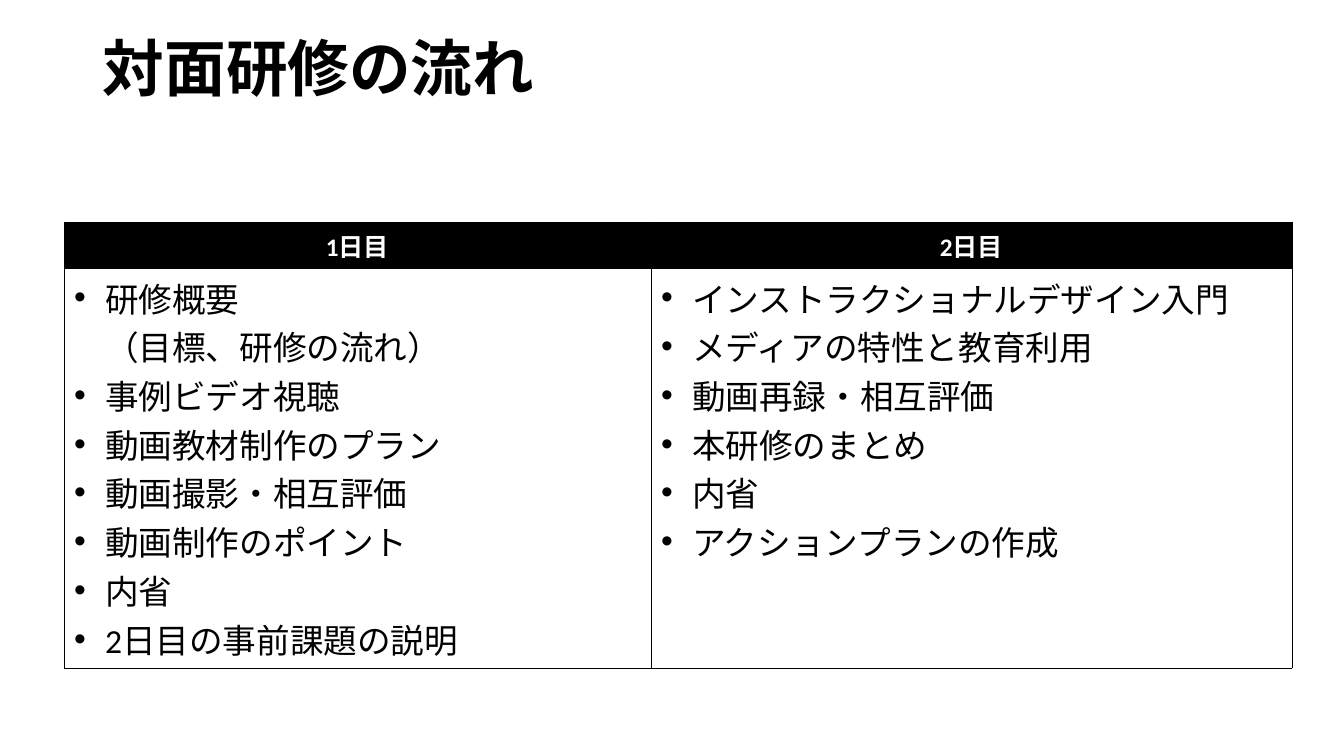
from lxml.etree import SubElement
from pptx import Presentation
from pptx.dml.color import RGBColor
from pptx.enum.lang import MSO_LANGUAGE_ID
from pptx.enum.text import MSO_ANCHOR, PP_ALIGN
from pptx.oxml.ns import qn
from pptx.util import Pt

PX = 914400 / 100.8
BLACK = "000000"
WHITE = "FFFFFF"
JAPANESE_FONT = "Noto Sans CJK JP"
INDENT = 31


def px(length):
    return round(length * PX)


def style_text(para, size, typeface, color, bold):
    for span in para.runs:
        span.font.size = Pt(size)
        span.font.bold = bold
        span.font.name = typeface
        span.font.language_id = MSO_LANGUAGE_ID.JAPANESE
        span.font.color.rgb = RGBColor.from_string(color)
        SubElement(span.font._element, qn("a:ea"), typeface=JAPANESE_FONT)


days = [
    ("1日目", [
        "研修概要\v（目標、研修の流れ）",
        "事例ビデオ視聴",
        "動画教材制作のプラン",
        "動画撮影・相互評価",
        "動画制作のポイント",
        "内省",
        "2日目の事前課題の説明",
    ]),
    ("2日目", [
        "インストラクショナルデザイン入門",
        "メディアの特性と教育利用",
        "動画再録・相互評価",
        "本研修のまとめ",
        "内省",
        "アクションプランの作成",
    ]),
]

deck = Presentation()
deck.slide_width = px(1344)
deck.slide_height = px(756)
page = deck.slides.add_slide(deck.slide_layouts[6])

title_box = page.shapes.add_textbox(px(93), px(22), px(1159), px(99))
title_frame = title_box.text_frame
title_frame.word_wrap = True
title_frame.vertical_anchor = MSO_ANCHOR.MIDDLE
title_frame.text = "対面研修の流れ"
title_frame.paragraphs[0].line_spacing = 0.9
style_text(title_frame.paragraphs[0], 44, JAPANESE_FONT, BLACK, True)

schedule = page.shapes.add_table(2, len(days), px(64), px(222), px(1228), px(446)).table
for row, height in zip(schedule.rows, (46, 400)):
    row.height = px(height)
for column, width in zip(schedule.columns, (587, 641)):
    column.width = px(width)

for column_index, (day, sessions) in enumerate(days):
    header = schedule.cell(0, column_index)
    header.text_frame.text = day
    header_para = header.text_frame.paragraphs[0]
    header_para.alignment = PP_ALIGN.CENTER
    style_text(header_para, 18, "Calibri", WHITE, True)

    body = schedule.cell(1, column_index)
    body.text_frame.text = "\n".join(sessions)
    for para in body.text_frame.paragraphs:
        style_text(para, 24, "Calibri", BLACK, False)
        properties = para._p.get_or_add_pPr()
        properties.set("marL", str(px(INDENT)))
        properties.set("indent", str(-px(INDENT)))
        SubElement(properties, qn("a:buFont"), typeface="Arial")
        SubElement(properties, qn("a:buChar"), char="•")

    for cell, color in ((header, BLACK), (body, WHITE)):
        cell_properties = cell._tc.get_or_add_tcPr()
        for side in ("lnL", "lnR", "lnT", "lnB"):
            border = SubElement(cell_properties, qn(f"a:{side}"), w=str(Pt(0.75)))
            border_fill = SubElement(border, qn("a:solidFill"))
            SubElement(border_fill, qn("a:srgbClr"), val=BLACK)
        cell.fill.solid()
        cell.fill.fore_color.rgb = RGBColor.from_string(color)

deck.save("out.pptx")
